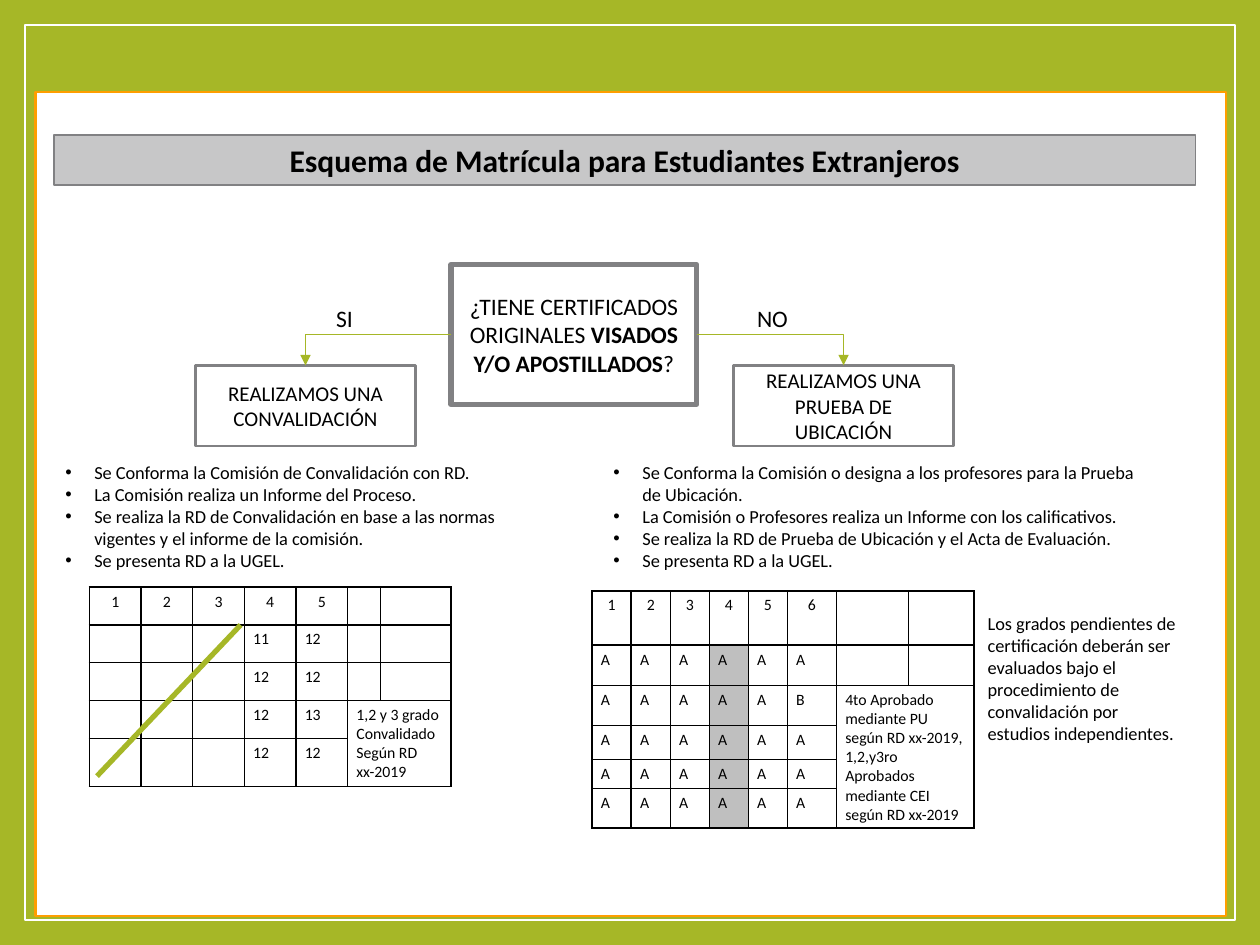
from dataclasses import dataclass
from typing import Any, NamedTuple

from lxml.etree import SubElement
from pptx import Presentation
from pptx.dml.color import RGBColor
from pptx.enum.shapes import MSO_CONNECTOR as CONN, MSO_SHAPE as SHAPE
from pptx.enum.text import MSO_ANCHOR as ANCHOR, MSO_AUTO_SIZE as AUTO, PP_ALIGN as ALIGN
from pptx.oxml.ns import qn
from pptx.util import Inches, Pt


@dataclass(frozen=True)
class Theme:
    font: str = "Calibri"
    green: str = "A6B727"
    orange: str = "FE9E00"
    white: str = "FFFFFF"
    black: str = "000000"
    gray: str = "818183"
    banner: str = "C7C7C8"
    shade: str = "BFBFBF"
    title: float = 18
    question: float = 13.5
    answer: float = 12
    body: float = 10.5
    cell: float = 9


class Area(NamedTuple):
    left: float
    top: float
    width: float
    height: float


class Box(NamedTuple):
    area: Area
    fill: str
    line: str
    weight: float
    runs: tuple = ()
    size: float = 12


class Label(NamedTuple):
    area: Area
    lines: tuple
    size: float
    wrap: bool = True
    bullet: bool = False


class Grid(NamedTuple):
    area: Area
    cols: list
    rows: list
    values: list
    merge: tuple
    shaded: int = -1


T = Theme()


def apply(obj: Any, **values: Any) -> None:
    for name, value in values.items():
        setattr(obj, name, value)


def inches(area: Area) -> list:
    return [Inches(v) for v in area]


def paint(fill: Any, color: str) -> None:
    fill.solid()
    fill.fore_color.rgb = RGBColor.from_string(color)


def outline(sp: Any, color: str, weight: float) -> None:
    paint(sp.line.fill, color)
    sp.line.width = Pt(weight)


def add_run(p: Any, text: str, size: float, bold: bool = False) -> None:
    r = p.add_run()
    r.text = text
    apply(r.font, name=T.font, size=Pt(size), bold=bold)
    r.font.color.rgb = RGBColor.from_string(T.black)


def add_box(s: Any, box: Box) -> Any:
    sp = s.shapes.add_shape(SHAPE.RECTANGLE, *inches(box.area))
    sp.shadow.inherit = False
    paint(sp.fill, box.fill)
    outline(sp, box.line, box.weight)
    tf = sp.text_frame
    apply(tf, word_wrap=True, vertical_anchor=ANCHOR.MIDDLE)
    p = tf.paragraphs[0]
    p.alignment = ALIGN.CENTER
    for text, bold in box.runs:
        add_run(p, text, box.size, bold)
    return sp


def add_title(s: Any, area: Area, text: str) -> None:
    sp = s.shapes.title
    sp.element.getparent().append(sp.element)
    left, top, width, height = inches(area)
    apply(sp, left=left, top=top, width=width, height=height)
    paint(sp.fill, T.banner)
    outline(sp, T.gray, 0.79)
    tf = sp.text_frame
    apply(tf, word_wrap=True, auto_size=AUTO.NONE, vertical_anchor=ANCHOR.MIDDLE)
    tf.paragraphs[0].alignment = ALIGN.CENTER
    add_run(tf.paragraphs[0], text, T.title, True)


def add_label(s: Any, label: Label) -> None:
    tf = s.shapes.add_textbox(*inches(label.area)).text_frame
    apply(tf, word_wrap=label.wrap, auto_size=AUTO.SHAPE_TO_FIT_TEXT)
    for i, line in enumerate(label.lines):
        p = tf.add_paragraph() if i else tf.paragraphs[0]
        add_run(p, line, label.size)
        if label.bullet:
            pPr = p._p.get_or_add_pPr()
            pPr.set("marL", str(Inches(0.23)))
            pPr.set("indent", str(-Inches(0.23)))
            SubElement(pPr, qn("a:buFont"), typeface="Arial")
            SubElement(pPr, qn("a:buChar"), char="•")


def add_line(s: Any, kind: Any, start: tuple, end: tuple, weight: float) -> Any:
    sp = s.shapes.add_connector(kind, *[Inches(v) for v in start + end])
    outline(sp, T.green, weight)
    SubElement(sp._element.spPr, qn("a:effectLst"))
    return sp


def add_branch(s: Any, question: Any, side: int, answer: Any, start: tuple, end: tuple) -> None:
    sp = add_line(s, CONN.ELBOW, start, end, 0.79)
    sp.begin_connect(question, side)
    sp.end_connect(answer, 0)
    sp._element.spPr.find(qn("a:prstGeom")).set("prst", "bentConnector2")
    SubElement(sp.line._get_or_add_ln(), qn("a:tailEnd"), type="triangle")


def format_cell(cell: Any, text: str, align: Any, fill: str) -> None:
    apply(cell, margin_left=Inches(0.07), margin_right=Inches(0.07),
          margin_top=Inches(0.04), margin_bottom=Inches(0.04))
    tcPr = cell._tc.get_or_add_tcPr()
    for side in ("lnL", "lnR", "lnT", "lnB"):
        ln = SubElement(tcPr, qn(f"a:{side}"), w=str(Pt(1)))
        SubElement(SubElement(ln, qn("a:solidFill")), qn("a:srgbClr"), val=T.black)
    if fill:
        paint(cell.fill, fill)
    else:
        cell.fill.background()
    p = cell.text_frame.paragraphs[0]
    p.alignment = align
    if text:
        add_run(p, text, T.cell)
    else:
        SubElement(p._p, qn("a:endParaRPr"), sz=str(int(T.cell * 100)))


def add_grid(s: Any, grid: Grid) -> None:
    table = s.shapes.add_table(len(grid.rows), len(grid.cols), *inches(grid.area)).table
    apply(table, first_row=False, horz_banding=False)
    for col, width in zip(table.columns, grid.cols):
        col.width = Inches(width)
    for row, height in zip(table.rows, grid.rows):
        row.height = Inches(height)
    for i, row in enumerate(grid.values):
        for j, text in enumerate(row):
            fill = T.shade if i and j == grid.shaded else ""
            format_cell(table.cell(i, j), text, ALIGN.LEFT if i else ALIGN.CENTER, fill)
    first, last = grid.merge
    table.cell(*first).merge(table.cell(*last))


def main() -> None:
    prs = Presentation()
    apply(prs, slide_width=Inches(10), slide_height=Inches(7.5))
    s = prs.slides.add_slide(prs.slide_layouts[5])
    paint(s.background.fill, T.green)

    add_box(s, Box(Area(0.2, 0.2, 9.6, 7.1), T.green, T.white, 1))
    add_box(s, Box(Area(0.28, 0.73, 9.45, 6.54), T.white, T.orange, 1.5))
    add_title(s, Area(0.43, 1.07, 9.06, 0.4), "Esquema de Matrícula para Estudiantes Extranjeros")

    question = add_box(s, Box(Area(3.58, 2.1, 1.95, 1.11), T.white, T.gray, 3, (
        ("¿TIENE CERTIFICADOS ORIGINALES ", False),
        ("VISADOS Y/O APOSTILLADOS", True), ("?", False)), T.question))
    yes, no = [add_box(s, Box(Area(left, 2.9, 1.75, 0.64), T.white, T.gray, 1.5,
                              ((text, False),), T.answer))
               for left, text in ((1.55, "REALIZAMOS UNA CONVALIDACIÓN"),
                                  (5.82, "REALIZAMOS UNA PRUEBA DE UBICACIÓN"))]
    add_branch(s, question, 1, yes, (3.58, 2.65), (2.42, 2.9))
    add_branch(s, question, 3, no, (5.53, 2.65), (6.69, 2.9))

    for label in (
        Label(Area(2.57, 2.36, 0.34, 0.33), ("SI",), T.question, wrap=False),
        Label(Area(5.91, 2.36, 0.45, 0.33), ("NO",), T.question, wrap=False),
        Label(Area(0.42, 3.61, 4, 0.98), (
            "Se Conforma la Comisión de Convalidación con RD.",
            "La Comisión realiza un Informe del Proceso.",
            "Se realiza la RD de Convalidación en base a las normas vigentes y el informe de la comisión.",
            "Se presenta RD a la UGEL."), T.body, bullet=True),
        Label(Area(4.77, 3.61, 4.35, 0.98), (
            "Se Conforma la Comisión o designa a los profesores para la Prueba de Ubicación.",
            "La Comisión o Profesores realiza un Informe con los calificativos.",
            "Se realiza la RD de Prueba de Ubicación y el Acta de Evaluación.",
            "Se presenta RD a la UGEL."), T.body, bullet=True),
        Label(Area(7.74, 4.81, 1.75, 1.16), (
            "Los grados pendientes de certificación deberán ser evaluados bajo el "
            "procedimiento de convalidación por estudios independientes.",), T.body),
    ):
        add_label(s, label)

    marks = [("11", "12"), ("12", "12"), ("12", "13"), ("12", "12")]
    validated = [[*"12345", "", ""]] + [["", "", "", *pair, "", ""] for pair in marks]
    validated[3][5] = "1,2 y 3 grado Convalidado Según RD xx-2019"
    add_grid(s, Grid(Area(0.71, 4.66, 2.87, 1.59), [0.41] * 5 + [0.26, 0.56],
                     [0.3] * 4 + [0.37], validated, ((3, 5), (4, 6))))
    add_line(s, CONN.STRAIGHT, (1.91, 4.96), (0.77, 6.16), 3)

    placed = [[*grades, "", ""] for grades in ("123456", "AAAAAA", "AAAAAB") + ("AAAAAA",) * 3]
    placed[2][6] = ("4to Aprobado mediante PU según RD xx-2019, "
                    "1,2,y3ro Aprobados mediante CEI según RD xx-2019")
    add_grid(s, Grid(Area(4.7, 4.69, 3.04, 1.87), [0.31] * 5 + [0.39, 0.57, 0.52],
                     [0.43, 0.32, 0.32, 0.27, 0.23, 0.31], placed, ((2, 6), (5, 7)), shaded=3))

    prs.save("out.pptx")


if __name__ == "__main__":
    main()
